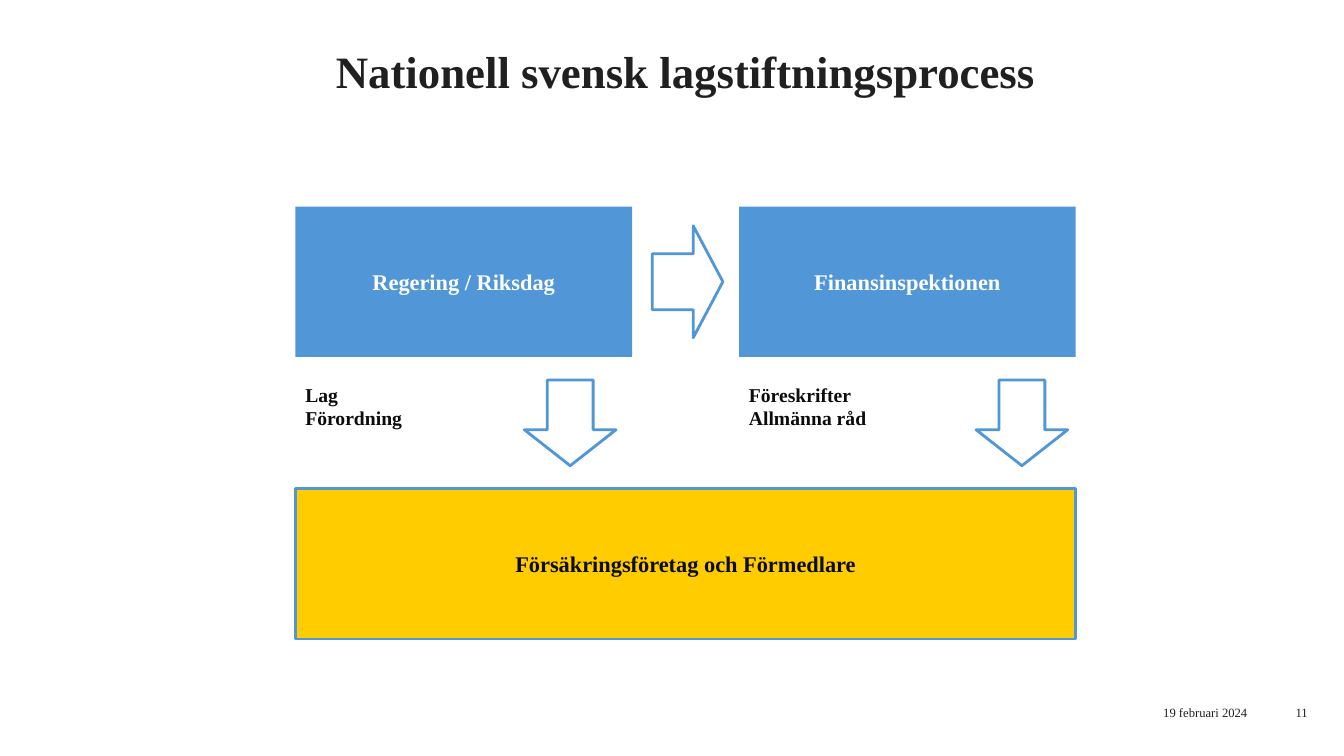
from pptx import Presentation
from pptx.dml.color import RGBColor
from pptx.enum import shapes, text
from pptx.util import Inches, Pt

# Content
TITLE = "Nationell svensk lagstiftningsprocess"
FOOTERS = [("19 februari 2024", 10.72, 1.65), ("11", 12.73, 0.24)]
# Institution, the rules it issues, left edge of its box, left edge of its arrow
INSTITUTIONS = [
    ("Regering / Riksdag", ["Lag", "Förordning"], 2.93, 5.23),
    ("Finansinspektionen", ["Föreskrifter", "Allmänna råd"], 7.33, 9.71),
]
RECIPIENTS = "Försäkringsföretag och Förmedlare"

FONT = "Times New Roman"
COLORS = {"blue": "5197D7", "yellow": "FFCC00", "white": "FFFFFF",
          "title": "202020", "dark": "0C0C0C"}

# Layout in inches
BOX_WIDTH, BOX_HEIGHT = 3.34, 1.49
INSTITUTION_TOP, RULES_TOP, RECIPIENT_TOP = 2.05, 3.77, 4.85
LEFT = INSTITUTIONS[0][2]
FULL_WIDTH = INSTITUTIONS[-1][2] + BOX_WIDTH - LEFT


def color(name):
    return RGBColor.from_string(COLORS[name])


def write(frame, lines, size, ink, align, anchor, margins=None, bold=True, spacing=None):
    frame.word_wrap = True
    frame.auto_size = text.MSO_AUTO_SIZE.NONE
    frame.vertical_anchor = anchor
    if margins is not None:
        frame.margin_left = frame.margin_right = Inches(margins)
        frame.margin_top = frame.margin_bottom = Inches(margins)
    frame.text = "\n".join(lines)
    for para in frame.paragraphs:
        para.alignment = align
        if spacing:
            para.line_spacing = spacing
        for span in para.runs:
            span.font.name = FONT
            span.font.size = Pt(size)
            span.font.bold = bold
            span.font.color.rgb = color(ink)


def add_figure(kind, place, fill, line=None):
    figure = page.shapes.add_shape(kind, *map(Inches, place))
    figure.shadow.inherit = False
    figure.fill.solid()
    figure.fill.fore_color.rgb = color(fill)
    if line:
        figure.line.color.rgb = color(line)
        figure.line.width = Pt(2)
    else:
        figure.line.fill.background()
    return figure


def add_box(label, place, fill, ink, line=None):
    box = add_figure(shapes.MSO_SHAPE.RECTANGLE, place, fill, line)
    write(box.text_frame, [label], 16, ink, text.PP_ALIGN.CENTER,
          text.MSO_ANCHOR.MIDDLE, 0.04)


def add_arrow(place, rotation=0):
    arrow = add_figure(shapes.MSO_SHAPE.RIGHT_ARROW, place, "white", "blue")
    arrow.adjustments[1] = 0.42
    arrow.rotation = rotation


deck = Presentation()
deck.slide_width, deck.slide_height = Inches(13.33), Inches(7.5)
page = deck.slides.add_slide(deck.slide_layouts[5])

# Title
title = page.shapes.title
title.left, title.top, title.width, title.height = map(Inches, (1.92, 0.19, 9.76, 0.78))
write(title.text_frame, [TITLE], 32, "title", text.PP_ALIGN.CENTER,
      text.MSO_ANCHOR.BOTTOM, 0)

# Date and page number
for footer, left, width in FOOTERS:
    box = page.shapes.add_textbox(*map(Inches, (left, 6.99, width, 0.18)))
    write(box.text_frame, [footer], 9, "title", text.PP_ALIGN.RIGHT,
          text.MSO_ANCHOR.TOP, 0, bold=False)

# Institutions, their rules and the arrows down
for name, rules, left, arrow_left in INSTITUTIONS:
    add_box(name, (left, INSTITUTION_TOP, BOX_WIDTH, BOX_HEIGHT), "blue", "white")
    label = page.shapes.add_textbox(*map(Inches, (left, RULES_TOP, BOX_WIDTH, 0.55)))
    write(label.text_frame, rules, 14, "dark", text.PP_ALIGN.LEFT,
          text.MSO_ANCHOR.TOP, spacing=0.95)
    add_arrow((arrow_left, 3.74, 0.85, 0.91), 90)

# Arrow between the institutions
add_arrow((6.47, 2.24, 0.7, 1.11))

# Recipients
add_box(RECIPIENTS, (LEFT, RECIPIENT_TOP, FULL_WIDTH, BOX_HEIGHT),
        "yellow", "dark", "blue")

deck.save("out.pptx")
